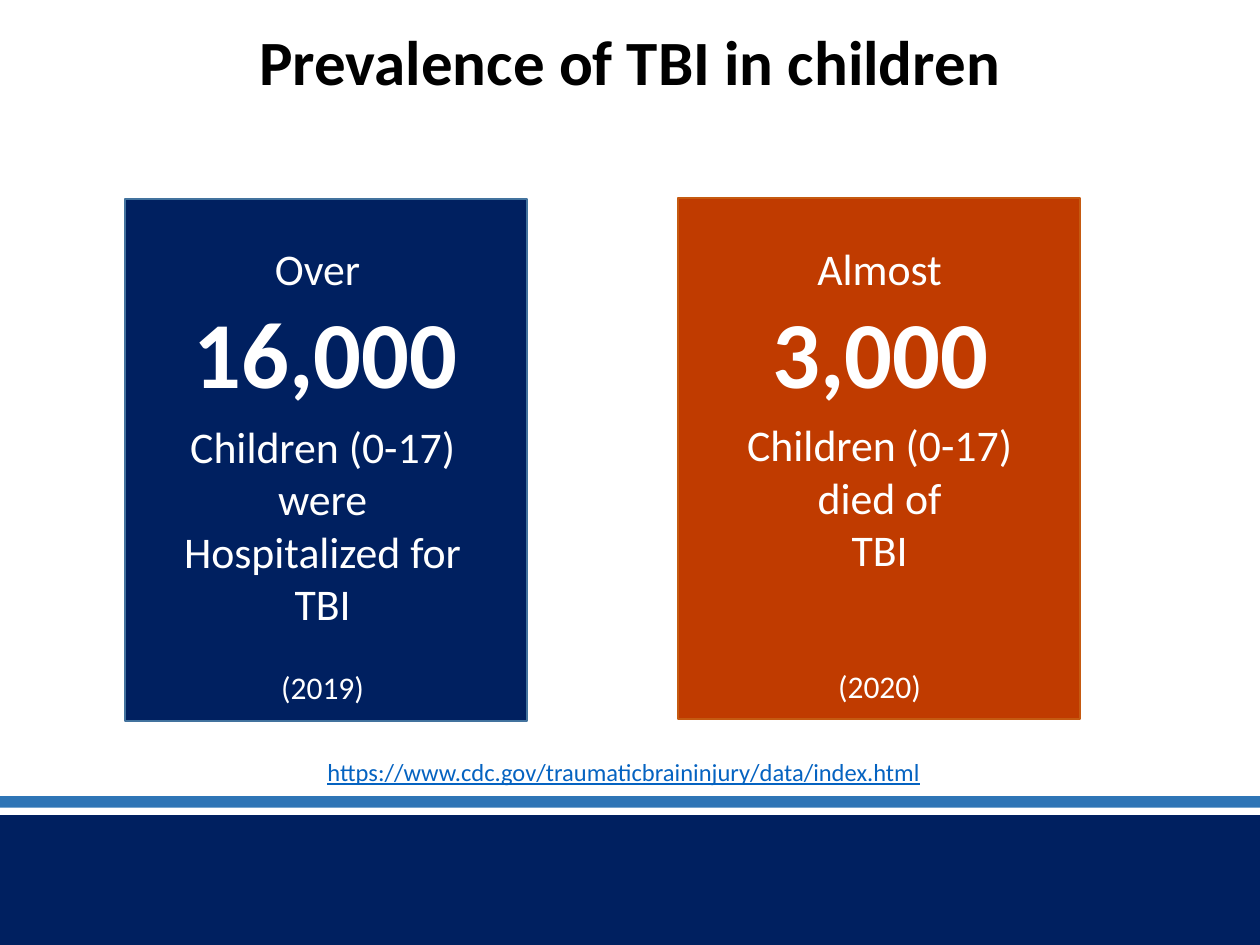
from pptx import Presentation
from pptx.dml.color import RGBColor
from pptx.enum import shapes, text
from pptx.util import Pt

FONT = "Calibri"
NAVY = "002060"
WHITE = "FFFFFF"
CARD_WIDTH, CARD_HEIGHT = 229.7, 298.1


def color(hex_code):
    return RGBColor.from_string(hex_code)


def add_block(slide, left, top, width, height, fill, outline=None):
    block = slide.shapes.add_shape(
        shapes.MSO_SHAPE.RECTANGLE, Pt(left), Pt(top), Pt(width), Pt(height))
    block.shadow.inherit = False
    block.fill.solid()
    block.fill.fore_color.rgb = color(fill)
    if outline:
        block.line.color.rgb = color(outline)
        block.line.width = Pt(1)
    else:
        block.line.fill.background()


def add_text(slide, lines, left, top, width, height, size=25, ink=WHITE,
             bold=False, underline=False, spacing=1.0):
    box = slide.shapes.add_textbox(Pt(left), Pt(top), Pt(width), Pt(height))
    frame = box.text_frame
    frame.word_wrap = True
    frame.vertical_anchor = text.MSO_ANCHOR.TOP
    for index, line in enumerate(lines):
        paragraph = frame.paragraphs[0] if index == 0 else frame.add_paragraph()
        paragraph.alignment = text.PP_ALIGN.CENTER
        paragraph.line_spacing = spacing
        run = paragraph.add_run()
        run.text = line
        run.font.name = FONT
        run.font.size = Pt(size)
        run.font.bold = bold
        run.font.underline = underline
        run.font.color.rgb = color(ink)
    return frame


def add_card(slide, left, top, fill, outline, qualifier, count, details, year,
             year_gap, shifts):
    add_block(slide, left, top, CARD_WIDTH, CARD_HEIGHT, fill, outline)
    middle = left + CARD_WIDTH / 2
    qualifier_x, count_x, details_x = (middle + shift for shift in shifts)
    add_text(slide, [qualifier], qualifier_x - 70.5, 134.6, 141, 37.4)
    add_text(slide, [count], count_x - 97, 164.2, 194, 72.7, size=54, bold=True)
    frame = add_text(slide, details + [year], details_x - 91.5, top + 122.4,
                     183, 172)
    year_line = frame.paragraphs[-1]
    year_line.space_before = Pt(year_gap)
    year_line.runs[0].font.size = Pt(18)


def main():
    deck = Presentation()
    deck.slide_width, deck.slide_height = Pt(720), Pt(540)
    slide = deck.slides.add_slide(deck.slide_layouts[6])

    add_block(slide, 0, 465.8, 720, 74.2, NAVY)
    add_block(slide, 0, 455, 720, 6.5, "2E75B6")
    add_text(slide, ["Prevalence of TBI in children"], 49.7, 14.4, 620.6, 86.4,
             size=36, ink="000000", bold=True, spacing=0.9)

    add_card(slide, 71.3, 113.8, NAVY, "43739E", "Over", "16,000",
             ["Children (0-17)", "were", "Hospitalized for TBI"], "(2019)",
             year_gap=22, shifts=(-4.7, 0, -1.8))
    add_card(slide, 387.4, 113, "C03B00", "C55A11", "Almost", "3,000",
             ["Children (0-17)", "died of", "TBI"], "(2020)",
             year_gap=52.5, shifts=(0.4, 1.1, 0.4))

    add_text(slide, ["https://www.cdc.gov/traumaticbraininjury/data/index.html"],
             121.5, 429.1, 470, 24.5, size=14, ink="0563C1", underline=True)
    deck.save("out.pptx")


if __name__ == "__main__":
    main()
